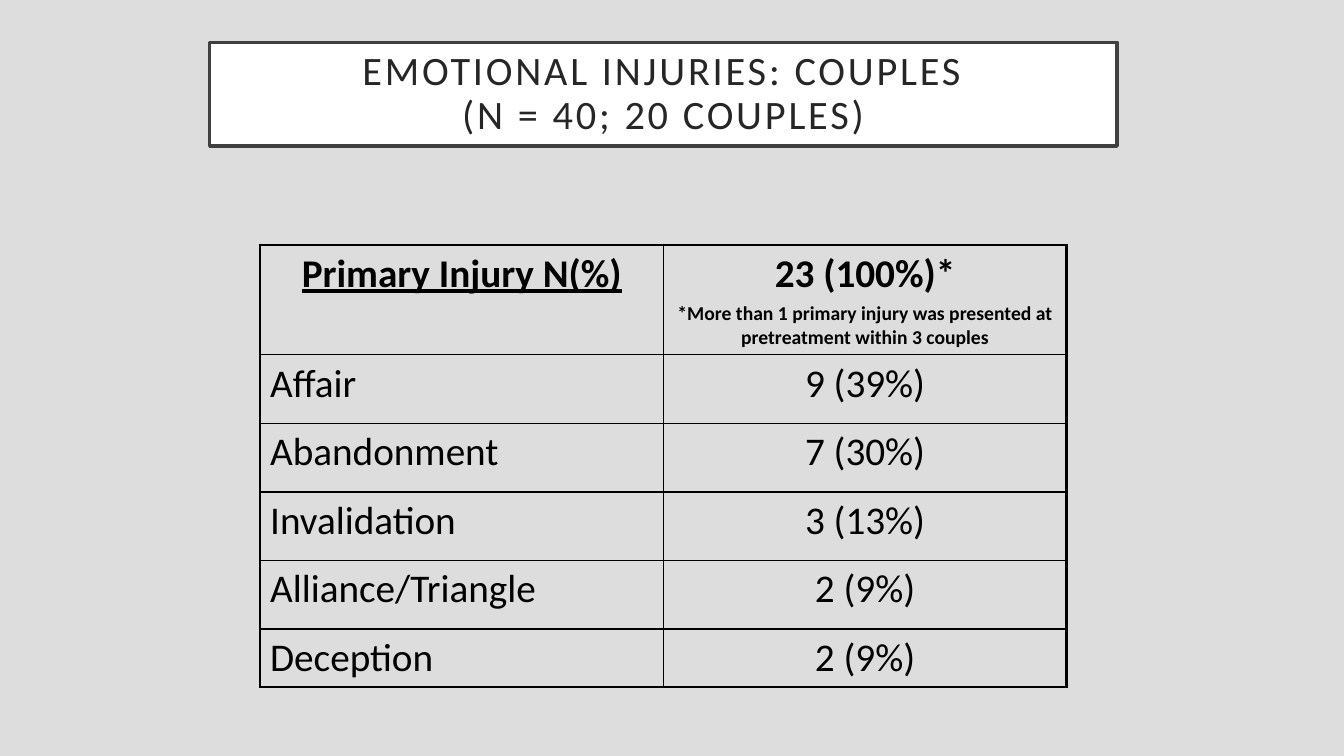
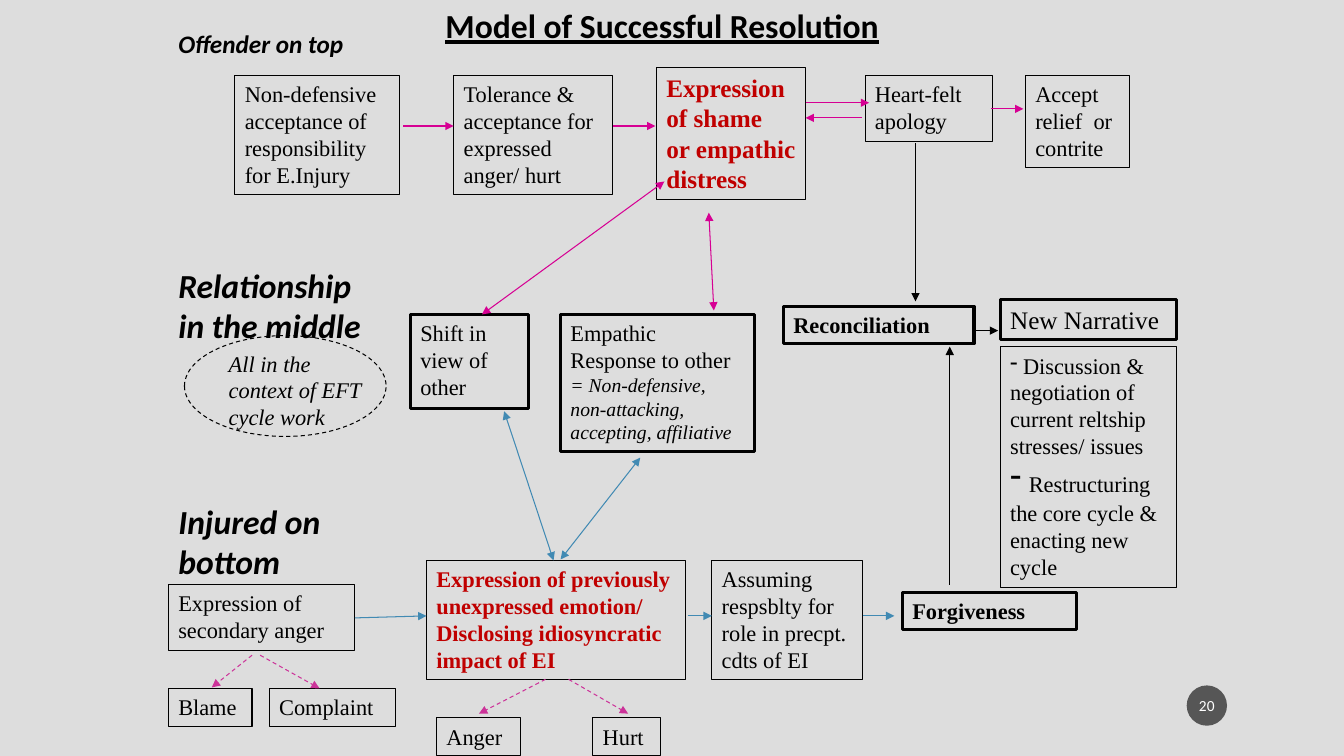
"""Build two slides: a table of emotional injuries and a model of their resolution."""
from dataclasses import dataclass

from lxml import etree
from pptx import Presentation
from pptx.dml.color import RGBColor
from pptx.enum.dml import MSO_LINE
from pptx.enum.shapes import MSO_CONNECTOR, MSO_SHAPE
from pptx.enum.text import MSO_ANCHOR, PP_ALIGN
from pptx.oxml.ns import qn
from pptx.util import Inches, Pt

RECT, OVAL = MSO_SHAPE.RECTANGLE, MSO_SHAPE.OVAL
STRAIGHT, DASH = MSO_CONNECTOR.STRAIGHT, MSO_LINE.DASH
LEFT, CENTER = PP_ALIGN.LEFT, PP_ALIGN.CENTER
TOP, MIDDLE = MSO_ANCHOR.TOP, MSO_ANCHOR.MIDDLE

SANS, SERIF = "Calibri", "Times New Roman"
THIN, THICK = 0.75, 2.25
HEX = {
    "back": "DDDDDD",
    "black": "000000",
    "white": "FFFFFF",
    "frame": "404040",
    "title": "262626",
    "red": "C00000",
    "pink": "D60093",
    "mauve": "CC3399",
    "blue": "418AB3",
    "badge": "1D1D1D",
}


@dataclass(frozen=True)
class Style:
    """Look of a run of text."""
    size: float = 16
    font: str = SERIF
    color: str = "black"
    bold: bool = False
    slant: bool = False
    under: bool = False


@dataclass(frozen=True)
class Box:
    """Shape with text; no edge when the weight is zero."""
    x: float
    y: float
    w: float
    h: float
    text: str = ""
    style: Style = Style()
    weight: float = THIN
    edge: str = "black"
    fill: str = ""
    form: int = RECT
    dash: bool = False
    align: int = LEFT
    anchor: int = TOP
    pad: tuple = (0.1, 0.05)


@dataclass(frozen=True)
class Arrow:
    """Straight line with a head at its end or at both."""
    x: float
    y: float
    to_x: float
    to_y: float
    color: str = "black"
    both: bool = False
    dash: bool = False


BODY = Style()
STRONG = Style(bold=True)
ITALIC = Style(slant=True)
NOTE = Style(14, slant=True)
LARGE = Style(18)
ALERT = Style(color="red", bold=True)
SHAME = Style(18, color="red", bold=True)
LABEL = Style(24, SANS, bold=True, slant=True)
SIDE = Style(18, SANS, bold=True, slant=True)
HEAD = Style(24, SANS, bold=True, under=True)
DASHED = Style(24, SANS)
CELL = Style(28, SANS)
CELL_HEAD = Style(28, SANS, bold=True)
CELL_LINE = Style(28, SANS, bold=True, under=True)
CELL_NOTE = Style(14, SANS, bold=True)

TITLE = Box(2.08, 0.42, 9, 1.03,
            "EMOTIONAL INJURIES: COUPLES\v(N = 40; 20 COUPLES)",
            Style(28.8, SANS, "title"), 2.5, "frame", "white",
            align=CENTER, anchor=MIDDLE, pad=(0.2, 0.2))
TOTAL = ("23 (100%)*\n*More than 1 primary injury was presented at "
         "pretreatment within 3 couples")
ROWS = (
    ("Primary Injury N(%)", TOTAL, 0.96),
    ("Affair", "9 (39%)", 0.68),
    ("Abandonment", "7 (30%)", 0.68),
    ("Invalidation", "3 (13%)", 0.68),
    ("Alliance/Triangle", "2 (9%)", 0.68),
    ("Deception", "2 (9%)", 0.5),
)

BOXES = (
    Box(2.33, 0.75, 1.63, 1.18, "Non-defensive acceptance of responsibility for E.Injury"),
    Box(4.5, 0.75, 1.58, 1.18, "Tolerance & acceptance for expressed anger/ hurt"),
    Box(6.51, 0.67, 1.48, 1.31, "Expression of shame\nor empathic distress", SHAME),
    Box(8.58, 0.75, 1.26, 0.65, "Heart-felt apology"),
    Box(10.17, 0.75, 1.03, 0.91, "Accept relief  or contrite"),
    Box(4.07, 3.12, 1.17, 0.93, "Shift in view of other", weight=THICK),
    Box(7.77, 3.04, 1.89, 0.37, "Reconciliation", STRONG, THICK),
    Box(9.92, 2.97, 1.75, 0.4, "New Narrative", LARGE, THICK),
    Box(1.67, 5.8, 1.85, 0.65, "Expression of secondary anger"),
    Box(4.23, 5.56, 2.57, 1.18,
        "Expression of previously unexpressed emotion/ "
        "Disclosing idiosyncratic impact of EI", ALERT),
    Box(7.06, 5.56, 1.5, 1.18, "Assuming respsblty for role in precpt. cdts of EI"),
    Box(8.95, 5.88, 1.73, 0.37, "Forgiveness", STRONG, THICK),
    Box(1.67, 6.83, 0.83, 0.38, "Blame"),
    Box(2.67, 6.83, 1.25, 0.38, "Complaint"),
    Box(4.33, 7.12, 0.83, 0.38, "Anger"),
    Box(5.88, 7.12, 0.67, 0.38, "Hurt"),
    Box(2.17, 3.42, 1.58, 0.9, "All in the context of EFT cycle work", ITALIC, 0),
    Box(1.83, 3.33, 2, 1, form=OVAL, dash=True),
    Box(1.67, 0.23, 2, 0.4, "Offender on top", SIDE, 0),
    Box(1.67, 2.58, 2.19, 0.91, "Relationship in the middle", LABEL, 0),
    Box(1.67, 4.92, 1.88, 0.91, "Injured on bottom", LABEL, 0),
    Box(4.32, 0, 5.23, 0.51, "Model of Successful Resolution", HEAD, 0),
)
REPLY = Box(5.56, 3.12, 1.92, 1.36, "Empathic Response to other ", weight=THICK)
STORY = Box(9.92, 3.44, 1.75, 2.39,
            " Discussion & negotiation of current reltship stresses/ issues\n ")
BADGE = Box(11.77, 6.8, 0.4, 0.4, "20", Style(11, SANS, "white"), 0,
            fill="badge", form=OVAL, align=CENTER, anchor=MIDDLE, pad=(0.02, 0.05))

ARROWS = (
    Arrow(4, 1.25, 4.5, 1.25, "pink"),
    Arrow(6.08, 1.25, 6.5, 1.25, "pink"),
    Arrow(7.99, 1.02, 8.62, 1.02, "pink"),
    Arrow(8.55, 1.17, 7.99, 1.17, "pink"),
    Arrow(9.83, 1.08, 10.15, 1.08, "pink"),
    Arrow(7.03, 2.11, 7.08, 3.08, "pink", both=True),
    Arrow(6.59, 1.8, 4.78, 3.12, "pink", both=True),
    Arrow(5.49, 5.56, 5, 4.08, "blue", both=True),
    Arrow(5.56, 5.55, 6.35, 4.54, "blue", both=True),
    Arrow(3.52, 6.13, 4.23, 6.11, "blue"),
    Arrow(6.82, 6.11, 7.06, 6.11, "blue"),
    Arrow(8.56, 6.11, 8.87, 6.11, "blue"),
    Arrow(9.66, 3.28, 9.9, 3.28),
    Arrow(9.08, 1.42, 9.08, 2.99),
    Arrow(9.42, 5.8, 9.42, 3.44),
    Arrow(2.5, 6.5, 2.1, 6.82, "mauve", dash=True),
    Arrow(2.58, 6.5, 3.17, 6.83, "mauve", dash=True),
    Arrow(5.41, 6.74, 4.75, 7.08, "mauve", dash=True),
    Arrow(5.64, 6.74, 6.23, 7.08, "mauve", dash=True),
)


def tint(name: str) -> RGBColor:
    """Look up a colour."""
    return RGBColor.from_string(HEX[name])


def format_run(run, style: Style) -> None:
    """Apply a style to one run."""
    font = run.font
    font.name, font.size = style.font, Pt(style.size)
    font.bold, font.italic, font.underline = style.bold, style.slant, style.under
    font.color.rgb = tint(style.color)


def format_para(para, style: Style, align: int = LEFT) -> None:
    """Align a paragraph and style its runs."""
    para.alignment = align
    for run in para.runs:
        format_run(run, style)


def add_run(para, text: str, style: Style) -> None:
    """Append a run in its own style."""
    run = para.add_run()
    run.text = text
    format_run(run, style)


def set_line(line, color: str, weight: float, dash: bool) -> None:
    """Set colour, width and dash of a line."""
    line.color.rgb = tint(color)
    line.width = Pt(weight)
    if dash:
        line.dash_style = DASH


def add_box(slide, box: Box):
    """Draw a box and return its shape."""
    shape = slide.shapes.add_shape(
        box.form, Inches(box.x), Inches(box.y), Inches(box.w), Inches(box.h))
    shape.shadow.inherit = False
    if box.fill:
        shape.fill.solid()
        shape.fill.fore_color.rgb = tint(box.fill)
    else:
        shape.fill.background()
    if box.weight:
        set_line(shape.line, box.edge, box.weight, box.dash)
    else:
        shape.line.fill.background()
    frame = shape.text_frame
    frame.word_wrap, frame.vertical_anchor = True, box.anchor
    frame.margin_left = frame.margin_right = Inches(box.pad[0])
    frame.margin_top = frame.margin_bottom = Inches(box.pad[1])
    frame.text = box.text
    for para in frame.paragraphs:
        format_para(para, box.style, box.align)
    return shape


def add_arrow(slide, arrow: Arrow) -> None:
    """Draw an arrow."""
    link = slide.shapes.add_connector(
        STRAIGHT, Inches(arrow.x), Inches(arrow.y), Inches(arrow.to_x), Inches(arrow.to_y))
    set_line(link.line, arrow.color, THIN, arrow.dash)
    props = link.element.spPr
    for end in ("a:headEnd", "a:tailEnd") if arrow.both else ("a:tailEnd",):
        etree.SubElement(props.find(qn("a:ln")), qn(end), type="triangle")
    etree.SubElement(props, qn("a:effectLst"))


def set_edges(cell, outer: dict) -> None:
    """Draw the four borders of a cell, thick where outer."""
    props = cell._tc.get_or_add_tcPr()
    for side, thick in outer.items():
        line = etree.SubElement(props, qn(f"a:ln{side}"), w=str(Pt(THICK if thick else 1)))
        fill = etree.SubElement(line, qn("a:solidFill"))
        etree.SubElement(fill, qn("a:srgbClr"), val=HEX["black"])
    cell.fill.background()


def add_grid(slide) -> None:
    """Draw the table of injuries."""
    high = sum(row[2] for row in ROWS)
    grid = slide.shapes.add_table(
        len(ROWS), 2, Inches(2.58), Inches(2.43), Inches(8), Inches(high)).table
    grid.first_row = grid.horz_banding = False
    for r, (*texts, tall) in enumerate(ROWS):
        grid.rows[r].height = Inches(tall)
        for c, text in enumerate(texts):
            cell = grid.cell(r, c)
            cell.text_frame.text = text
            style = CELL if r else (CELL_LINE, CELL_HEAD)[c]
            for para in cell.text_frame.paragraphs:
                format_para(para, style, LEFT if r and not c else CENTER)
            set_edges(cell, {"L": c == 0, "R": c == 1, "T": r == 0, "B": r == len(ROWS) - 1})
    note = grid.cell(0, 1).text_frame.paragraphs[1]
    format_para(note, CELL_NOTE, CENTER)
    note.space_before = Pt(3)


def add_title(slide) -> None:
    """Draw the framed title."""
    shape = add_box(slide, TITLE)
    shape.text_frame.paragraphs[0].line_spacing = 0.9
    for props in shape.element.iter(qn("a:rPr")):
        props.set("spc", "200")


def add_model(slide) -> None:
    """Draw the model of resolution."""
    for box in BOXES:
        add_box(slide, box)
    reply = add_box(slide, REPLY).text_frame.paragraphs[0]
    add_run(reply, "= Non-defensive, non-attacking, accepting, affiliative", NOTE)
    story = add_box(slide, STORY)
    last = story.text_frame.paragraphs[1]
    format_para(last, DASHED)
    add_run(last, "Restructuring the core cycle & enacting new cycle", BODY)
    for props in story.element.iter(qn("a:pPr")):
        etree.SubElement(props, qn("a:buChar"), char="-")
    for arrow in ARROWS:
        add_arrow(slide, arrow)
    badge = add_box(slide, BADGE)
    shade = badge.element.spPr.find(f"{qn('a:solidFill')}/{qn('a:srgbClr')}")
    etree.SubElement(shade, qn("a:alpha"), val="70000")


def main() -> None:
    """Build and save the slides."""
    deck = Presentation()
    deck.slide_width, deck.slide_height = Inches(13.33), Inches(7.5)
    for parts in ((add_title, add_grid), (add_model,)):
        slide = deck.slides.add_slide(deck.slide_layouts[6])
        slide.background.fill.solid()
        slide.background.fill.fore_color.rgb = tint("back")
        for part in parts:
            part(slide)
    deck.save("out.pptx")


if __name__ == "__main__":
    main()
